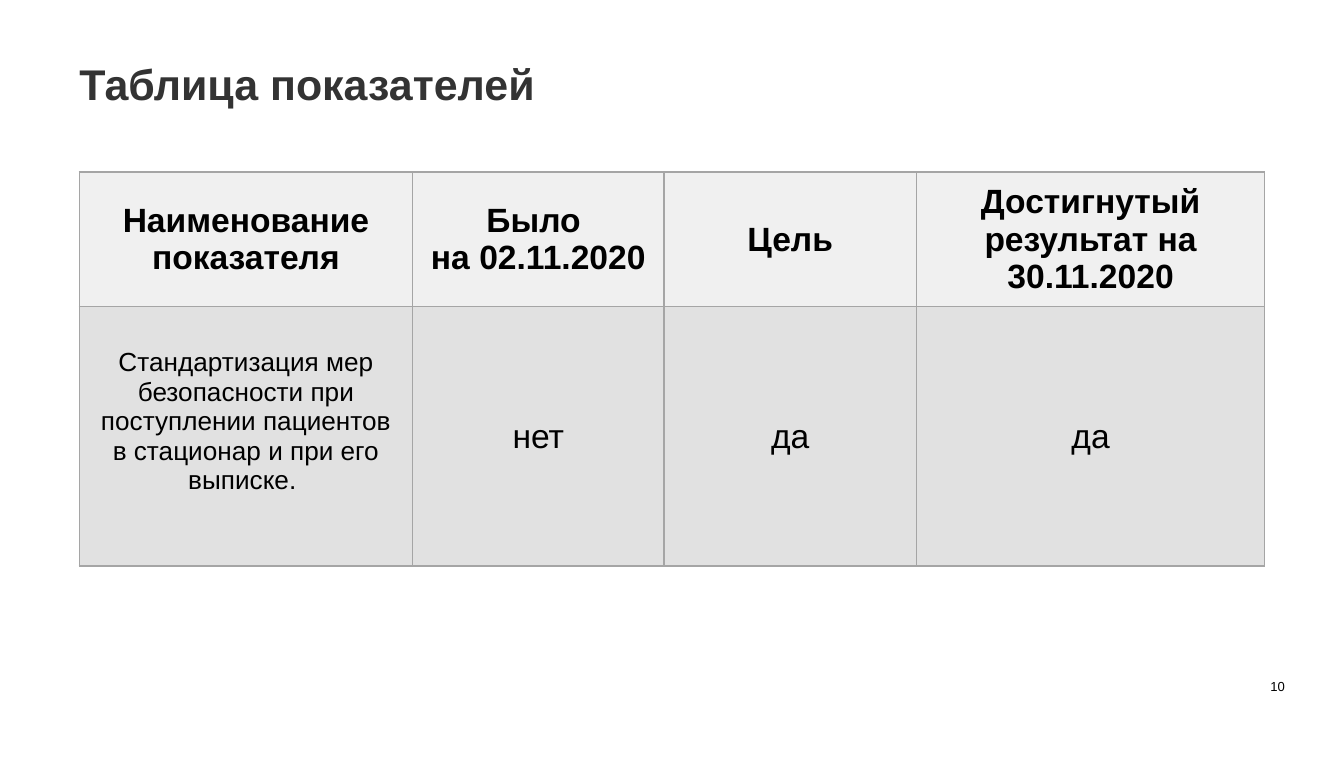
from dataclasses import dataclass

import pptx
import pptx.util
from lxml import etree
from pptx.dml.color import RGBColor
from pptx.enum.text import MSO_ANCHOR, PP_ALIGN
from pptx.oxml.ns import qn
from pptx.util import Inches, Pt

TITLE = "Таблица показателей"
PAGE_NUMBER = "10"
# Each cell is a list of paragraphs.
HEADER = [
    ["Наименование показателя"],
    ["Было ", "на 02.11.2020"],
    ["Цель"],
    ["Достигнутый результат на 30.11.2020"],
]
INDICATOR = [
    ["Стандартизация мер безопасности при поступлении пациентов "
     "в стационар и при его выписке. "],
    ["нет"],
    ["да"],
    ["да"],
]


@dataclass(frozen=True)
class Theme:
    font: str = "Arial"
    text: str = "000000"
    title: str = "333333"
    header_fill: str = "F0F0F0"
    body_fill: str = "E1E1E1"
    border: str = "A5A5A5"
    title_size: int = 23
    cell_size: int = 18
    name_size: int = 14
    number_size: int = 7


THEME = Theme()
SLIDE_WIDTH, SLIDE_HEIGHT = 10, 5.63
MARGIN = 0.59
TABLE_TOP = 1.28
COLUMNS = [2.48, 1.87, 1.88, 2.59]
ROWS = [0.69, 1.93]
NAME_BOTTOM_INSET = 0.27


def write(frame, lines, size, color=THEME.text, bold=False, align=PP_ALIGN.CENTER):
    for index, line in enumerate(lines):
        para = frame.paragraphs[0] if index == 0 else frame.add_paragraph()
        para.alignment = align
        span = para.add_run()
        span.text = line
        span.font.name = THEME.font
        span.font.size = Pt(size)
        span.font.bold = bold
        span.font.color.rgb = RGBColor.from_string(color)


def clear_insets(frame):
    frame.margin_left = frame.margin_right = 0
    frame.margin_top = frame.margin_bottom = 0
    frame.word_wrap = True


def style_cell(cell, fill):
    cell.vertical_anchor = MSO_ANCHOR.MIDDLE
    properties = cell._tc.get_or_add_tcPr()
    for side in ("a:lnL", "a:lnR", "a:lnT", "a:lnB"):
        line = etree.SubElement(properties, qn(side), w=str(Pt(1)))
        solid = etree.SubElement(line, qn("a:solidFill"))
        etree.SubElement(solid, qn("a:srgbClr"), val=THEME.border)
    cell.fill.solid()
    cell.fill.fore_color.rgb = RGBColor.from_string(fill)


def add_title(page):
    title = page.shapes.title
    title.left, title.top = Inches(MARGIN), Inches(0.47)
    title.width, title.height = Inches(7.18), Inches(0.36)
    frame = title.text_frame
    clear_insets(frame)
    frame.vertical_anchor = MSO_ANCHOR.TOP
    write(frame, [TITLE], THEME.title_size, THEME.title, True, PP_ALIGN.LEFT)
    frame.paragraphs[0].line_spacing = 0.9


def add_indicator_table(page):
    table = page.shapes.add_table(
        len(ROWS), len(COLUMNS), Inches(MARGIN), Inches(TABLE_TOP),
        Inches(sum(COLUMNS)), Inches(sum(ROWS))).table
    table.horz_banding = False
    for column, width in zip(table.columns, COLUMNS):
        column.width = Inches(width)
    for row, height in zip(table.rows, ROWS):
        row.height = Inches(height)
    for r, texts in enumerate([HEADER, INDICATOR]):
        is_header = r == 0
        for c, lines in enumerate(texts):
            cell = table.cell(r, c)
            is_name = c == 0 and not is_header
            style_cell(cell, THEME.header_fill if is_header else THEME.body_fill)
            if is_name:
                cell.margin_bottom = Inches(NAME_BOTTOM_INSET)
            size = THEME.name_size if is_name else THEME.cell_size
            write(cell.text_frame, lines, size, bold=is_header)


def add_page_number(page):
    box = page.shapes.add_textbox(
        Inches(8.95), Inches(5.01), Inches(0.61), Inches(0.15))
    clear_insets(box.text_frame)
    box.text_frame.vertical_anchor = MSO_ANCHOR.BOTTOM
    write(box.text_frame, [PAGE_NUMBER], THEME.number_size, align=PP_ALIGN.RIGHT)


def main():
    deck = pptx.Presentation()
    deck.slide_width = Inches(SLIDE_WIDTH)
    deck.slide_height = Inches(SLIDE_HEIGHT)
    page = deck.slides.add_slide(deck.slide_layouts[5])
    add_page_number(page)
    add_indicator_table(page)
    add_title(page)
    deck.save("out.pptx")


if __name__ == "__main__":
    main()
